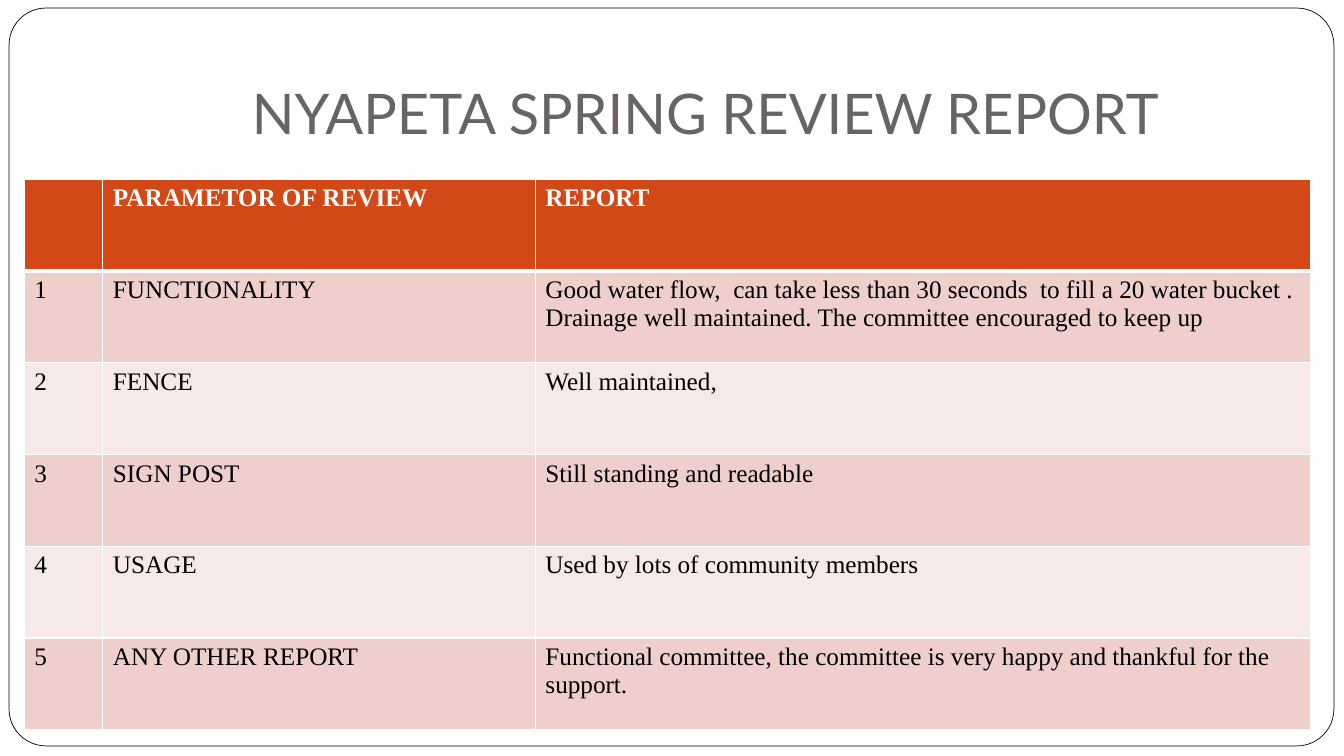
"""Build the Nyapeta spring review slide with its report table."""
from lxml import etree
from pptx import Presentation
from pptx.dml.color import RGBColor
from pptx.enum.shapes import MSO_SHAPE
from pptx.enum.text import MSO_ANCHOR, PP_ALIGN
from pptx.oxml.ns import qn
from pptx.util import Inches, Pt

ROUND = MSO_SHAPE.ROUNDED_RECTANGLE
BOTTOM = MSO_ANCHOR.BOTTOM
CENTER = PP_ALIGN.CENTER
WHITE = RGBColor(0xFF, 0xFF, 0xFF)
BLACK = RGBColor(0x00, 0x00, 0x00)
GRAY = RGBColor(0x69, 0x64, 0x64)
RUST = RGBColor(0xD3, 0x48, 0x17)
ROSE = RGBColor(0xEF, 0xCF, 0xCC)
BLUSH = RGBColor(0xF7, 0xE9, 0xE8)

WIDTHS = [0.78, 4.29, 7.69]
HEIGHT = 0.91
ROWS = [
    ("", "PARAMETOR OF REVIEW", "REPORT"),
    ("1", "FUNCTIONALITY",
     "Good water flow,  can take less than 30 seconds  to fill a 20 water bucket . "
     "Drainage well maintained. The committee encouraged to keep up"),
    ("2", "FENCE", "Well maintained,"),
    ("3", "SIGN POST", "Still standing and readable"),
    ("4", "USAGE", "Used by lots of community members"),
    ("5", "ANY OTHER REPORT",
     "Functional committee, the committee is very happy and thankful for the support."),
]


def add_text(para, text, name, size, color, bold=False):
    run = para.add_run()
    run.text = text
    run.font.name = name
    run.font.size = Pt(size)
    run.font.bold = bold
    run.font.color.rgb = color


def add_edge(cell, side, points):
    props = cell._tc.get_or_add_tcPr()
    line = etree.SubElement(props, qn(f"a:ln{side}"), w=str(Pt(points)))
    fill = etree.SubElement(line, qn("a:solidFill"))
    etree.SubElement(fill, qn("a:srgbClr"), val=str(WHITE))


deck = Presentation()
deck.slide_width = Inches(13.33)
deck.slide_height = Inches(7.5)
slide = deck.slides.add_slide(deck.slide_layouts[5])

title = slide.shapes.title
title.left, title.top = Inches(1.33), Inches(0.3)
title.width, title.height = Inches(11.33), Inches(1.25)
frame = title.text_frame
frame.vertical_anchor = BOTTOM
frame.margin_left = frame.margin_right = frame.margin_bottom = Inches(0.1)
frame.margin_top = Inches(0.05)
frame.paragraphs[0].alignment = CENTER
add_text(frame.paragraphs[0], "NYAPETA SPRING REVIEW REPORT", "Lato", 40, GRAY)

border = slide.shapes.add_shape(
    ROUND, Inches(0.09), Inches(0.08), Inches(13.14), Inches(7.32))
border.adjustments[0] = 0.05
border.shadow.inherit = False
border.fill.solid()
border.fill.fore_color.rgb = WHITE
border.line.color.rgb = BLACK
border.line.width = Pt(0.5)
title._element.addprevious(border._element)

table = slide.shapes.add_table(
    len(ROWS), len(WIDTHS), Inches(0.24), Inches(1.78),
    Inches(sum(WIDTHS)), Inches(HEIGHT * len(ROWS))).table
for column, width in zip(table.columns, WIDTHS):
    column.width = Inches(width)

for r, texts in enumerate(ROWS):
    table.rows[r].height = Inches(HEIGHT)
    head = r == 0
    shade = RUST if head else ROSE if r % 2 else BLUSH
    for c, text in enumerate(texts):
        cell = table.cell(r, c)
        for side in "LRTB":
            thick = (head and side == "B") or (r == 1 and side == "T")
            add_edge(cell, side, 3 if thick else 1)
        cell.fill.solid()
        cell.fill.fore_color.rgb = shade
        if text:
            add_text(cell.text_frame.paragraphs[0], text, "Times New Roman", 18,
                     WHITE if head else BLACK, head)

deck.save("out.pptx")
